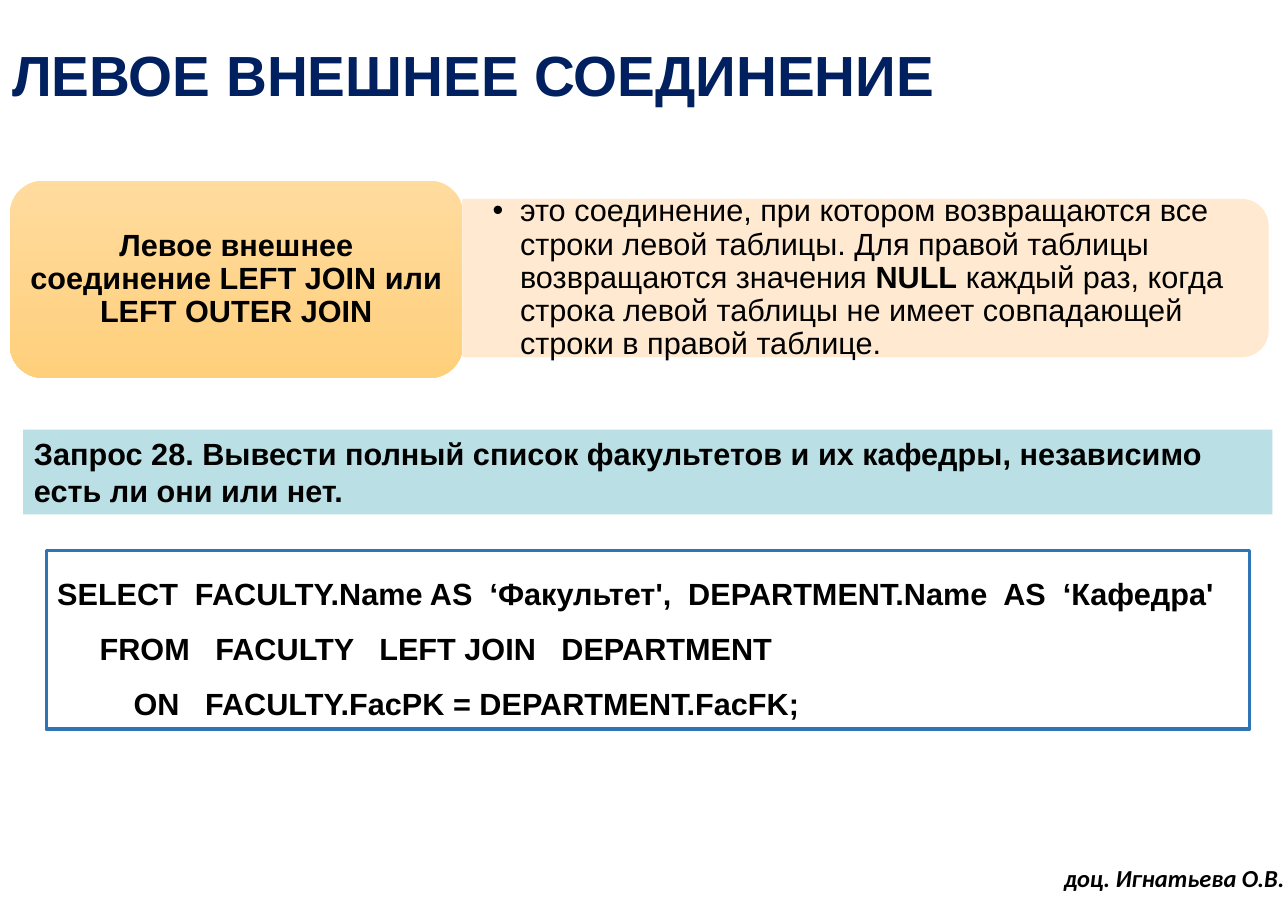
from lxml.etree import SubElement
from pptx import Presentation
from pptx.dml.color import RGBColor
from pptx.enum.shapes import MSO_SHAPE as Preset
from pptx.enum.text import MSO_ANCHOR as Anchor, MSO_AUTO_SIZE as AutoSize, PP_ALIGN as Align
from pptx.oxml.ns import qn
from pptx.util import Inches, Pt

COLORS = {
    "text": "000000",
    "title": "002060",
    "panel": "FFE8CC",
    "card_top": "FFDB9E",
    "card_bottom": "FFD07C",
    "task": "BADFE4",
    "frame": "2E75B6",
}
BODY = {"name": "Arial", "size": Pt(20), "bold": False, "italic": False}
STRONG = {**BODY, "bold": True}
TITLE = {**STRONG, "size": Pt(37)}
AUTHOR = {"name": "Calibri", "size": Pt(16), "bold": True, "italic": True}

CODE = [
    "SELECT  FACULTY.Name AS  ‘Факультет',  DEPARTMENT.Name  AS  ‘Кафедра'",
    "     FROM   FACULTY   LEFT JOIN   DEPARTMENT",
    "         ON   FACULTY.FacPK = DEPARTMENT.FacFK;",
]
DEFINITION = [
    ("это соединение, при котором возвращаются все строки левой таблицы. "
     "Для правой таблицы возвращаются значения ", BODY),
    ("NULL", STRONG),
    (" каждый раз, когда строка левой таблицы не имеет совпадающей "
     "строки в правой таблице.", BODY),
]


def rgb(name):
    return RGBColor.from_string(COLORS[name])


def set_attributes(target, values):
    for name, value in values.items():
        setattr(target, name, value)


def place(shape, left, top, width, height):
    box = {"left": left, "top": top, "width": width, "height": height}
    set_attributes(shape, {name: Inches(value) for name, value in box.items()})


def format_frame(shape, anchor=Anchor.TOP, side=0.1, edge=0.05, wrap=True):
    set_attributes(shape.text_frame, {
        "word_wrap": wrap, "auto_size": AutoSize.NONE, "vertical_anchor": anchor,
        "margin_left": Inches(side), "margin_right": Inches(side),
        "margin_top": Inches(edge), "margin_bottom": Inches(edge),
    })


def write_runs(paragraph, runs, color="text", spacing=1.0, align=Align.LEFT):
    set_attributes(paragraph, {
        "alignment": align, "line_spacing": spacing,
        "space_before": Pt(0), "space_after": Pt(0),
    })
    for text, style in runs:
        run = paragraph.add_run()
        run.text = text
        set_attributes(run.font, style)
        run.font.color.rgb = rgb(color)


def add_box(slide, preset, box, fill=None):
    shape = slide.shapes.add_shape(preset, *map(Inches, box))
    shape.shadow.inherit = False
    shape.line.fill.background()
    if fill:
        shape.fill.solid()
        shape.fill.fore_color.rgb = rgb(fill)
    else:
        shape.fill.background()
    format_frame(shape)
    return shape


def add_title(slide):
    title = slide.shapes.title
    place(title, 0, 0.12, 11.69, 1.18)
    format_frame(title, Anchor.MIDDLE, 0.11, 0.06)
    write_runs(title.text_frame.paragraphs[0], [("ЛЕВОЕ ВНЕШНЕЕ СОЕДИНЕНИЕ", TITLE)], "title", 0.9)


def add_definition(slide):
    panel = add_box(slide, Preset.ROUND_2_SAME_RECTANGLE, (7.14, -1.13, 1.43, 7.31), "panel")
    panel.rotation = 90
    panel.line.color.rgb = rgb("panel")
    panel.line.width = Pt(0.5)
    for color in panel.element.spPr.iter(qn("a:srgbClr")):
        SubElement(color, qn("a:alpha"), val="90000")

    body = slide.placeholders[1]
    body.element.addprevious(panel.element)
    place(body, 4.2, 1.88, 7.24, 1.29)
    format_frame(body, Anchor.MIDDLE, 0.27, 0.14)
    paragraph = body.text_frame.paragraphs[0]
    write_runs(paragraph, DEFINITION, spacing=0.9)
    properties = paragraph._p.get_or_add_pPr()
    properties.set("marL", str(Inches(0.25)))
    properties.set("indent", str(Inches(-0.25)))
    SubElement(properties, qn("a:buFont"), typeface="Arial")
    SubElement(properties, qn("a:buChar"), char="•")


def add_term_card(slide):
    card = add_box(slide, Preset.ROUNDED_RECTANGLE, (0.09, 1.64, 4.11, 1.79))
    card.fill.gradient()
    card.fill.gradient_angle = 270
    for stop, color in zip(card.fill.gradient_stops, ("card_top", "card_bottom")):
        stop.color.rgb = rgb(color)
    format_frame(card, Anchor.MIDDLE, 0.08, 0.04)
    term = "Левое внешнее соединение LEFT JOIN или LEFT OUTER JOIN"
    write_runs(card.text_frame.paragraphs[0], [(term, STRONG)], spacing=0.9, align=Align.CENTER)


def add_task(slide):
    task = add_box(slide, Preset.RECTANGLE, (0.21, 3.9, 11.34, 0.77), "task")
    text = "Запрос 28. Вывести полный список факультетов и их кафедры, независимо есть ли они или нет."
    write_runs(task.text_frame.paragraphs[0], [(text, STRONG)])


def add_query(slide):
    query = add_box(slide, Preset.RECTANGLE, (0.42, 5, 10.92, 1.62))
    query.line.color.rgb = rgb("frame")
    query.line.width = Pt(2.25)
    frame = query.text_frame
    for index, line in enumerate(CODE):
        paragraph = frame.add_paragraph() if index else frame.paragraphs[0]
        write_runs(paragraph, [(line, STRONG)], spacing=1.5)


def add_author(slide):
    author = slide.shapes.add_textbox(*map(Inches, (9.56, 7.79, 2.23, 0.37)))
    format_frame(author, wrap=False)
    write_runs(author.text_frame.paragraphs[0], [("доц. Игнатьева О.В.", AUTHOR)])


def main():
    presentation = Presentation()
    presentation.slide_width = Inches(11.69)
    presentation.slide_height = Inches(8.27)
    slide = presentation.slides.add_slide(presentation.slide_layouts[1])
    add_title(slide)
    add_definition(slide)
    add_term_card(slide)
    add_task(slide)
    add_query(slide)
    add_author(slide)
    presentation.save("out.pptx")


if __name__ == "__main__":
    main()
